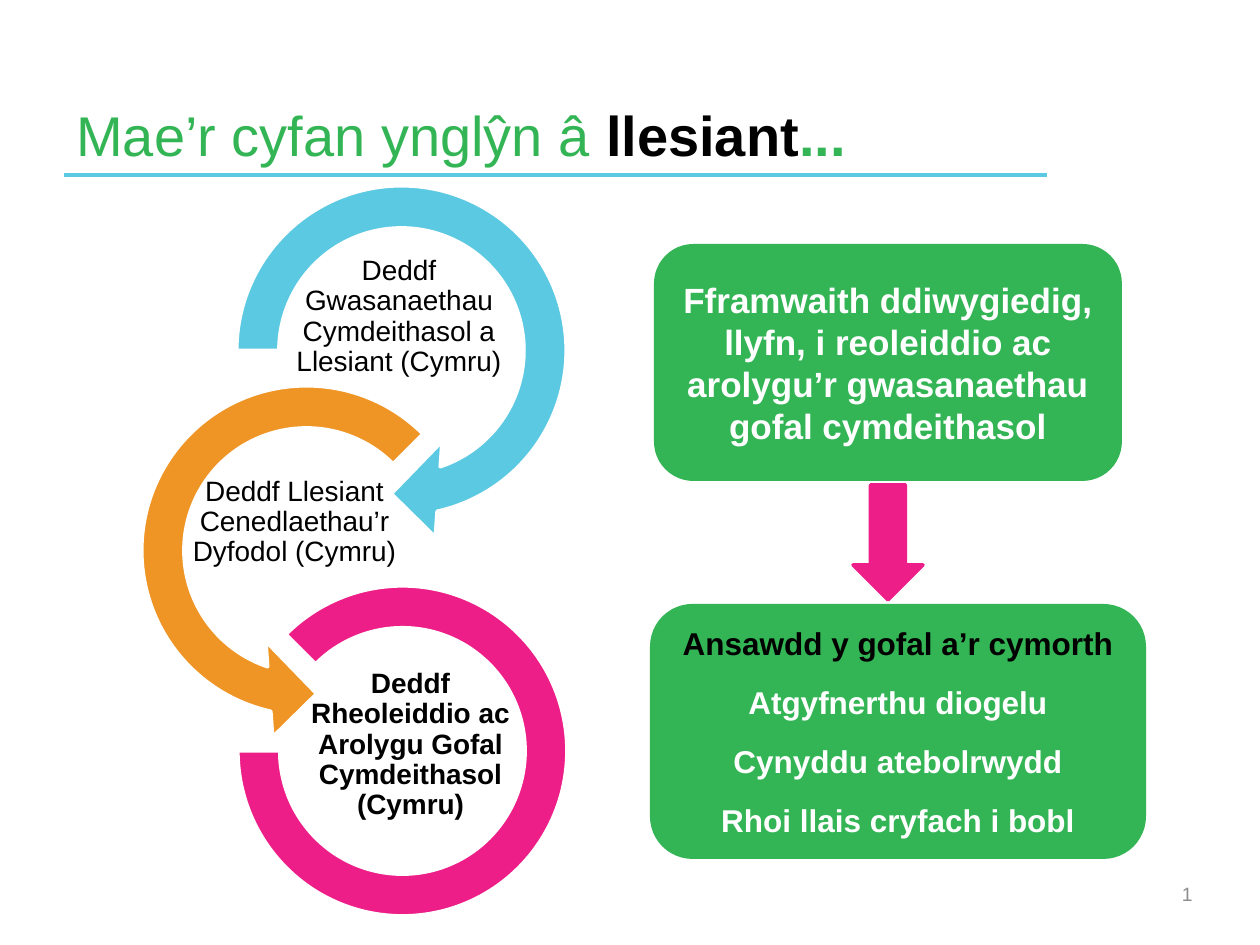
from pptx import Presentation
from pptx.dml.color import RGBColor
from pptx.enum.shapes import MSO_CONNECTOR, MSO_SHAPE
from pptx.enum.text import MSO_ANCHOR, PP_ALIGN
from pptx.oxml.ns import qn
from pptx.util import Emu, Pt
from lxml.etree import SubElement

EMU_PER_PX = 914400 / 126
THEME = {
    "font": "Arial",
    "blue": "5CC9E3", "green": "34B555", "orange": "EF9526", "pink": "ED1E87",
    "black": "000000", "white": "FFFFFF", "grey": "8C8C8C",
    "title": 32, "framework": 20, "outcome": 18, "act": 16, "number": 11,
    "line": 2,
}


def px(*lengths):
    return [Emu(round(length * EMU_PER_PX)) for length in lengths]


def write(shape, paragraphs, size, anchor=MSO_ANCHOR.MIDDLE, inset=None, **paragraph_format):
    """Fill a shape with paragraphs, each a list of (text, colour, bold) runs."""
    frame = shape.text_frame
    frame.word_wrap = True
    frame.vertical_anchor = anchor
    if inset is not None:
        for side in ("left", "top", "right", "bottom"):
            setattr(frame, f"margin_{side}", px(inset)[0])
    for index, runs in enumerate(paragraphs):
        paragraph = frame.add_paragraph() if index else frame.paragraphs[0]
        for name, value in paragraph_format.items():
            setattr(paragraph, name, value)
        for text, colour, bold in runs:
            run = paragraph.add_run()
            run.text = text
            font_format = {"name": THEME["font"], "size": Pt(THEME[size]), "bold": bold}
            for name, value in font_format.items():
                setattr(run.font, name, value)
            run.font.color.rgb = RGBColor.from_string(THEME[colour])


deck = Presentation()
deck.slide_width, deck.slide_height = px(1260, 945)
slide = deck.slides.add_slide(deck.slide_layouts[6])
shapes = slide.shapes

# Title, its rule and the slide number
title_rule = shapes.add_connector(MSO_CONNECTOR.STRAIGHT, *px(64, 175, 1047, 175))
title_rule.line.color.rgb = RGBColor.from_string(THEME["blue"])
title_rule.line.width = Pt(THEME["line"])
SubElement(title_rule._element.spPr, qn("a:effectLst"))

slide_number = shapes.add_textbox(*px(911, 869, 294, 50))
write(slide_number, [[("1", "grey", False)]], "number", alignment=PP_ALIGN.RIGHT)

title = shapes.add_textbox(*px(64, 37, 983, 137))
write(title, [[("Mae’r cyfan ynglŷn â ", "green", False), ("llesiant", "black", True),
               ("...", "green", True)]], "title", anchor=MSO_ANCHOR.BOTTOM)

# Chain of three acts: ring preset, ring box, adjustments, colour, label box, label, bold
acts = [
    (MSO_SHAPE.CIRCULAR_ARROW, (210, 159, 383, 383), (0.11, 11.42, 45, 108, 0.125), "blue",
     (278, 261, 242, 112), "Deddf Gwasanaethau Cymdeithasol a Llesiant (Cymru)", False),
    (MSO_SHAPE.LEFT_CIRCULAR_ARROW, (115, 359, 383, 383), (0.11, 11.42, 63, 189, 0.125), "orange",
     (158, 462, 273, 121), "Deddf Llesiant Cenedlaethau’r Dyfodol (Cymru)", False),
    (MSO_SHAPE.BLOCK_ARC, (238, 586, 329, 330), (135, 108, 0.127), "pink",
     (306, 670, 209, 150), "Deddf Rheoleiddio ac Arolygu Gofal Cymdeithasol (Cymru)", True),
]
for preset, ring_box, adjustments, colour, label_box, act_name, bold in acts:
    ring = shapes.add_shape(preset, *px(*ring_box))
    ring.shadow.inherit = False
    for index, value in enumerate(adjustments):
        ring.adjustments[index] = value
    ring.fill.solid()
    ring.fill.fore_color.rgb = RGBColor.from_string(THEME[colour])
    ring.line.color.rgb = RGBColor.from_string(THEME["white"])
    ring.line.width = Pt(THEME["line"])

    label = shapes.add_textbox(*px(*label_box))
    write(label, [[(act_name, "black", bold)]], "act", inset=1,
          alignment=PP_ALIGN.CENTER, line_spacing=0.9, space_after=Pt(3))

# Framework leading to its outcomes
panels = [
    ((654, 244, 468, 237), "framework", [
        ("Fframwaith ddiwygiedig, llyfn, i reoleiddio ac arolygu’r gwasanaethau "
         "gofal cymdeithasol", "white")]),
    ((650, 604, 496, 255), "outcome", [
        ("Ansawdd y gofal a’r cymorth", "black"),
        ("Atgyfnerthu diogelu", "white"),
        ("Cynyddu atebolrwydd", "white"),
        ("Rhoi llais cryfach i bobl", "white")]),
]
for panel_box, size, statements in panels:
    panel = shapes.add_shape(MSO_SHAPE.ROUNDED_RECTANGLE, *px(*panel_box))
    panel.shadow.inherit = False
    panel.fill.solid()
    panel.fill.fore_color.rgb = RGBColor.from_string(THEME["green"])
    panel.line.fill.background()
    write(panel, [[(text, colour, True)] for text, colour in statements], size,
          alignment=PP_ALIGN.CENTER, space_after=Pt(12))

leads_to = shapes.add_shape(MSO_SHAPE.DOWN_ARROW, *px(853, 485, 70, 115))
leads_to.shadow.inherit = False
leads_to.fill.solid()
for colour_format in (leads_to.fill.fore_color, leads_to.line.color):
    colour_format.rgb = RGBColor.from_string(THEME["pink"])
leads_to.line.width = Pt(THEME["line"])

deck.save("out.pptx")
